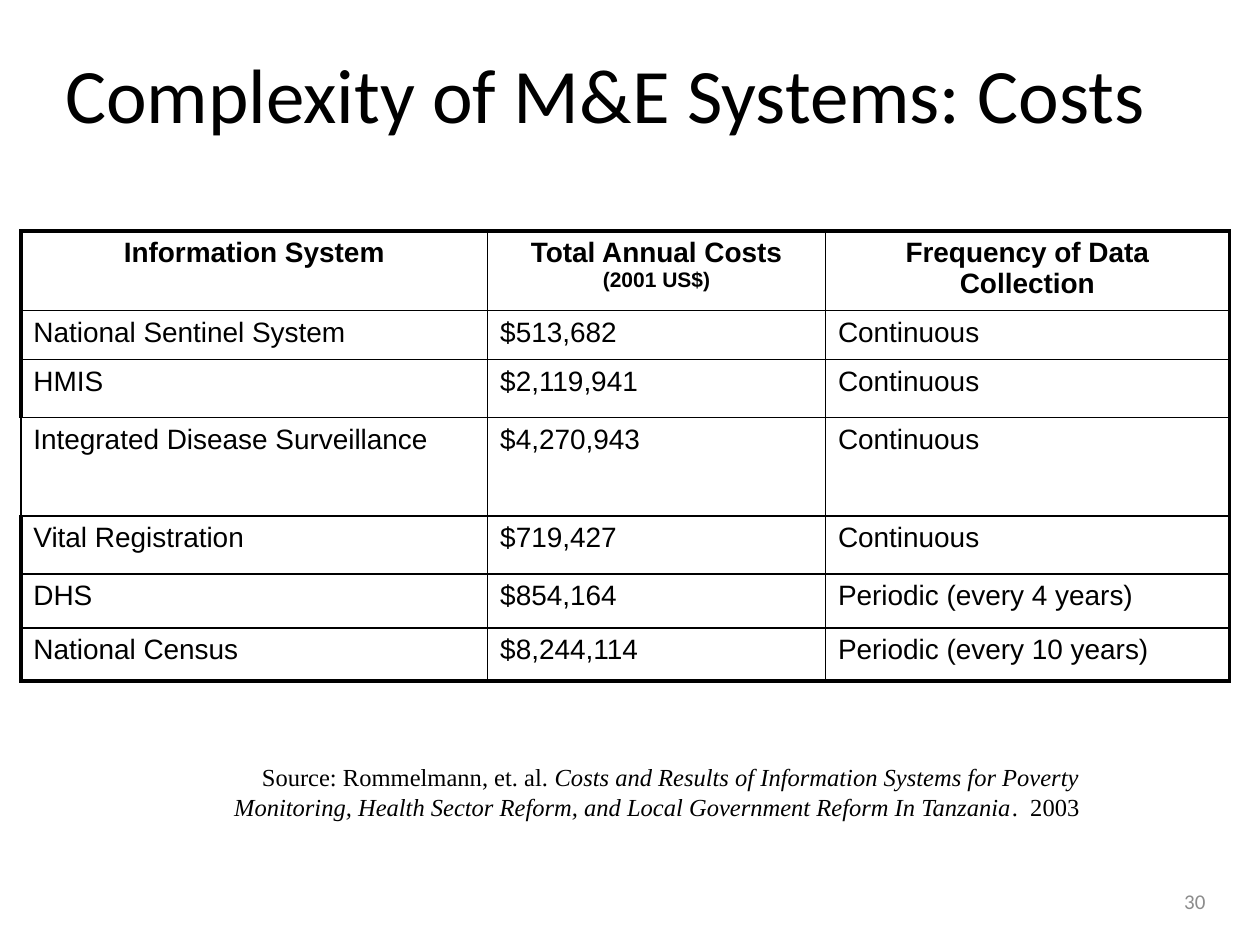
from dataclasses import dataclass

from lxml.etree import SubElement as Sub
from pptx import Presentation
from pptx.dml.color import RGBColor as Rgb
from pptx.enum.text import MSO_ANCHOR as Anchor, PP_ALIGN as Align
from pptx.oxml.ns import qn
from pptx.util import Cm, Pt


@dataclass(frozen=True)
class Theme:
    ink: str = "000000"
    paper: str = "FFFFFF"
    grey: str = "8C8C8C"
    head: str = "Calibri"
    body: str = "Arial"
    cite: str = "Times New Roman"
    title: float = 44
    cell: float = 16
    small: float = 12
    note: float = 14
    thin: float = 1
    thick: float = 2.25


T = Theme()

COLS = (9.41, 6.81, 8.14)
ROWS = (1.6, 0.99, 1.17, 1.98, 1.17, 1.09, 1.07)
HEADS = (
    (("Information System", T.cell),),
    (("Total Annual Costs ", T.cell), ("(2001 US$)", T.small)),
    (("Frequency of Data Collection", T.cell),),
)
COSTS = (
    ("National Sentinel System", "$513,682", "Continuous"),
    ("HMIS", "$2,119,941", "Continuous"),
    ("Integrated Disease Surveillance", "$4,270,943", "Continuous"),
    ("Vital Registration", "$719,427", "Continuous"),
    ("DHS", "$854,164", "Periodic (every 4 years)"),
    ("National Census", "$8,244,114", "Periodic (every 10 years)"),
)
THIN_LEFT = 3


def add_run(para, text, face, size, color=T.ink, bold=False, slant=False):
    run = para.add_run()
    run.text = text
    font = run.font
    font.name, font.size = face, Pt(size)
    font.bold, font.italic = bold, slant
    font.color.rgb = Rgb.from_string(color)


def add_edge(cell, side, width):
    line = Sub(cell._tc.get_or_add_tcPr(), qn(f"a:ln{side}"), w=str(Pt(width)))
    fill = Sub(line, qn("a:solidFill"))
    Sub(fill, qn("a:srgbClr"), val=T.ink)


def draw_title(slide, box):
    shape = slide.shapes.title
    shape.left, shape.top, shape.width, shape.height = map(Cm, box)
    frame = shape.text_frame
    frame.word_wrap = True
    frame.vertical_anchor = Anchor.MIDDLE
    para = frame.paragraphs[0]
    para.alignment = Align.LEFT
    para.line_spacing = 0.85
    add_run(para, "Complexity of M&E Systems: Costs", T.head, T.title)


def draw_cell(cell, row, col, runs):
    last = len(ROWS) - 1
    outer = {
        "L": col == 0 and row != THIN_LEFT,
        "R": col == len(COLS) - 1,
        "T": row == 0,
        "B": row == last,
    }
    for side, heavy in outer.items():
        add_edge(cell, side, T.thick if heavy else T.thin)
    cell.fill.solid()
    cell.fill.fore_color.rgb = Rgb.from_string(T.paper)
    para = cell.text_frame.paragraphs[0]
    para.alignment = Align.CENTER if row == 0 else Align.LEFT
    for text, size in runs:
        add_run(para, text, T.body, size, bold=row == 0)


def draw_table(slide, left, top):
    table = slide.shapes.add_table(
        len(ROWS), len(COLS), Cm(left), Cm(top), Cm(sum(COLS)), Cm(sum(ROWS))
    ).table
    table.first_row = table.horz_banding = False
    for col, width in zip(table.columns, COLS):
        col.width = Cm(width)
    for row, height in zip(table.rows, ROWS):
        row.height = Cm(height)
    body = [[((text, T.cell),) for text in line] for line in COSTS]
    for r, line in enumerate([HEADS, *body]):
        for c, runs in enumerate(line):
            draw_cell(table.cell(r, c), r, c, runs)


def add_box(slide, box, anchor):
    frame = slide.shapes.add_textbox(*map(Cm, box)).text_frame
    frame.word_wrap = True
    frame.vertical_anchor = anchor
    para = frame.paragraphs[0]
    para.alignment = Align.RIGHT
    return para


def draw_source(slide, box):
    para = add_box(slide, box, Anchor.TOP)
    work = (
        "Costs and Results of Information Systems for Poverty Monitoring, "
        "Health Sector Reform, and Local Government Reform In Tanzania"
    )
    add_run(para, "Source: Rommelmann, et. al. ", T.cite, T.note)
    add_run(para, work, T.cite, T.note, slant=True)
    add_run(para, ".  2003", T.cite, T.note)


def draw_number(slide, box):
    para = add_box(slide, box, Anchor.MIDDLE)
    add_run(para, "30", T.head, T.small, T.grey)


def main():
    deck = Presentation()
    deck.slide_width, deck.slide_height = Cm(25.4), Cm(19.05)
    slide = deck.slides.add_slide(deck.slide_layouts[5])
    draw_title(slide, (1.06, 0.42, 22.86, 3.18))
    draw_table(slide, 0.42, 4.66)
    draw_source(slide, (2.96, 15.24, 19.05, 1.45))
    draw_number(slide, (18.63, 17.66, 5.92, 1.01))
    deck.save("out.pptx")


if __name__ == "__main__":
    main()
